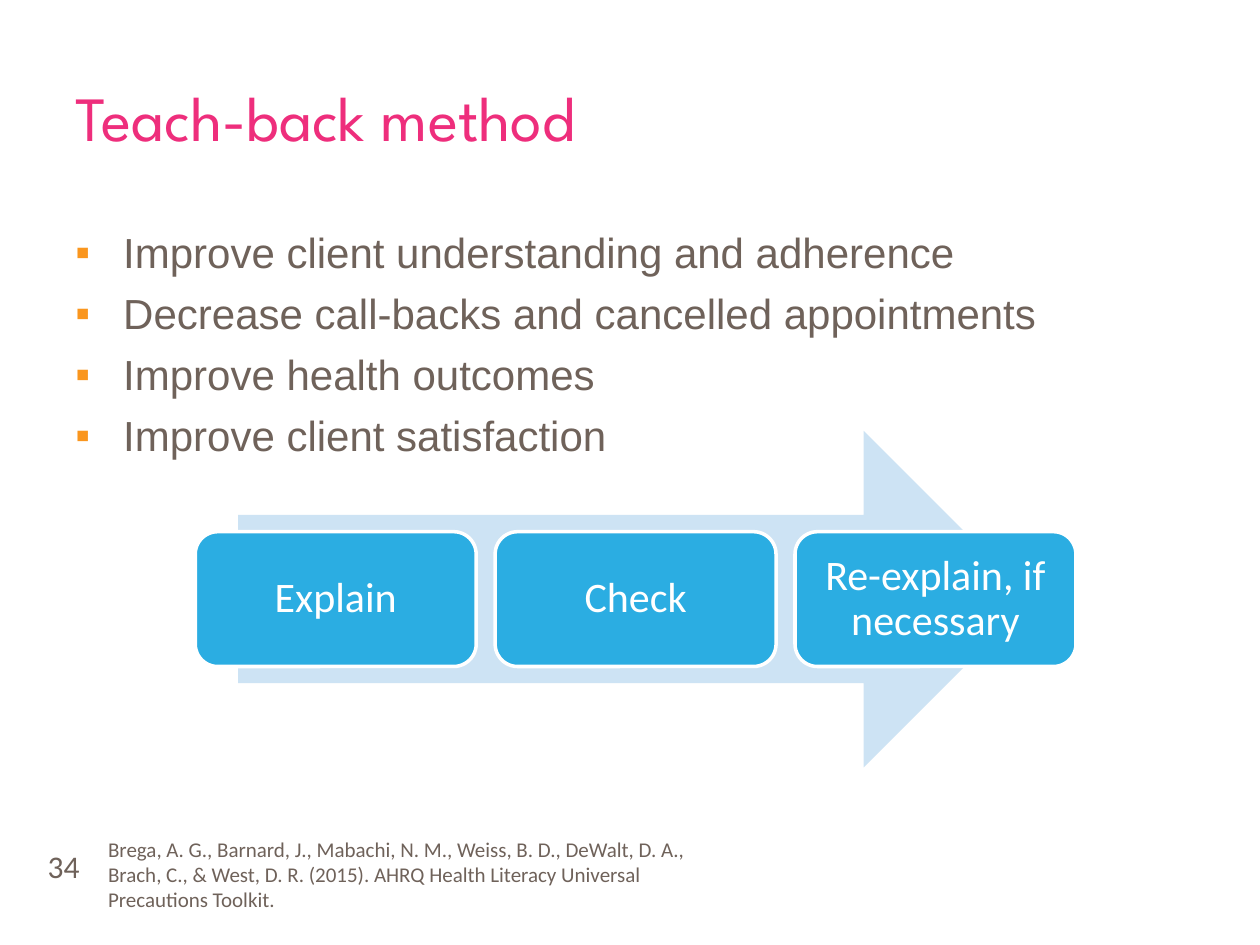
import dataclasses

import pptx
import pptx.dml.color
import pptx.enum.shapes
import pptx.enum.text
import pptx.oxml
import pptx.oxml.ns
import pptx.util
from lxml import etree

SHAPE = pptx.enum.shapes.MSO_SHAPE
ANCHOR = pptx.enum.text.MSO_ANCHOR
ALIGN = pptx.enum.text.PP_ALIGN

# Page grid: 100 columns by 75 rows of square cells
COLUMNS, ROWS = 100, 75
CELL = pptx.util.Inches(0.1)


@dataclasses.dataclass(frozen=True)
class Theme:
    heading_font: str = "League Spartan"
    body_font: str = "Arial"
    detail_font: str = "Calibri"
    pink: str = "EE2E7C"
    brown: str = "6F625A"
    orange: str = "FA961E"
    blue: str = "2BADE2"
    pale_blue: str = "CDE3F4"
    white: str = "FFFFFF"
    title_size: int = 36
    text_size: int = 24
    number_size: int = 18
    citation_size: int = 12


THEME = Theme()

BENEFITS = [
    "Improve client understanding and adherence",
    "Decrease call-backs and cancelled appointments",
    "Improve health outcomes",
    "Improve client satisfaction",
]
STEPS = ["Explain", "Check", "Re-explain, if necessary"]
CITATION = (
    "Brega, A. G., Barnard, J., Mabachi, N. M., Weiss, B. D., DeWalt, D. A., "
    "Brach, C., & West, D. R. (2015). AHRQ Health Literacy Universal "
    "Precautions Toolkit."
)


def rgb(code):
    return pptx.dml.color.RGBColor.from_string(code)


def cells(*counts):
    return [round(count * CELL) for count in counts]


def add_span(para, text, font, size, color):
    span = para.add_run()
    span.text = text
    span.font.name = font
    span.font.size = pptx.util.Pt(size)
    span.font.color.rgb = rgb(color)


def add_text_box(page, area, anchor=ANCHOR.TOP):
    box = page.shapes.add_textbox(*cells(*area))
    box.text_frame.word_wrap = True
    box.text_frame.vertical_anchor = anchor
    return box.text_frame


def add_shape(shapes, kind, area, fill=None, line=None):
    shape = shapes.add_shape(kind, *cells(*area))
    shape.shadow.inherit = False
    if fill:
        shape.fill.solid()
        shape.fill.fore_color.rgb = rgb(fill)
    else:
        shape.fill.background()
    if line:
        shape.line.color.rgb = rgb(line)
        shape.line.width = pptx.util.Pt(2)
    else:
        shape.line.fill.background()
    return shape


def set_bullet(para, symbol, color, indent):
    properties = para._p.get_or_add_pPr()
    properties.set("marL", str(indent))
    properties.set("indent", str(-indent))
    qn = pptx.oxml.ns.qn
    bullet_color = etree.SubElement(properties, qn("a:buClr"))
    etree.SubElement(bullet_color, qn("a:srgbClr"), val=color)
    etree.SubElement(properties, qn("a:buFont"), typeface=THEME.body_font)
    etree.SubElement(properties, qn("a:buChar"), char=symbol)


def add_bullets(page, area, lines):
    frame = add_text_box(page, area)
    for index, line in enumerate(lines):
        para = frame.add_paragraph() if index else frame.paragraphs[0]
        set_bullet(para, "▪", THEME.orange, pptx.util.Inches(0.38))
        para.space_before = pptx.util.Pt(6 if index else 0)
        add_span(para, line, THEME.body_font, THEME.text_size, THEME.brown)


def add_process(page, steps):
    group = page.shapes.add_group_shape()
    add_shape(group.shapes, SHAPE.RIGHT_ARROW, (18.9, 34.2, 63, 26.7), THEME.pale_blue)
    left, pitch, width = 15.5, 23.8, 22.3
    for index, step in enumerate(steps):
        area = (left + index * pitch, 42.2, width, 10.7)
        card = add_shape(group.shapes, SHAPE.ROUNDED_RECTANGLE, area, THEME.blue, THEME.white)
        frame = card.text_frame
        frame.word_wrap = True
        frame.vertical_anchor = ANCHOR.MIDDLE
        para = frame.paragraphs[0]
        para.alignment = ALIGN.CENTER
        para.line_spacing = 0.9
        add_span(para, step, THEME.detail_font, THEME.text_size, THEME.white)


def add_page_number(page, area, number):
    badge = add_shape(page.shapes, SHAPE.OVAL, area)
    badge.text_frame.vertical_anchor = ANCHOR.TOP
    para = badge.text_frame.paragraphs[0]
    para.alignment = ALIGN.LEFT
    add_span(para, number, THEME.detail_font, THEME.number_size, THEME.brown)


def main():
    deck = pptx.Presentation()
    deck.slide_width, deck.slide_height = cells(COLUMNS, ROWS)
    page = deck.slides.add_slide(deck.slide_layouts[6])

    # Title
    title = add_text_box(page, (5, 3, 90, 12.5), ANCHOR.MIDDLE)
    add_span(title.paragraphs[0], "Teach-back method",
             THEME.heading_font, THEME.title_size, THEME.pink)

    # Benefits and the three-step process
    add_bullets(page, (5, 17.5, 90, 44.2), BENEFITS)
    add_process(page, STEPS)

    # Footer
    add_page_number(page, (1.7, 65.9, 7.5, 5.5), "34")
    citation = add_text_box(page, (7.6, 65.9, 50, 7.1))
    add_span(citation.paragraphs[0], CITATION,
             THEME.detail_font, THEME.citation_size, THEME.brown)

    deck.save("out.pptx")


if __name__ == "__main__":
    main()
